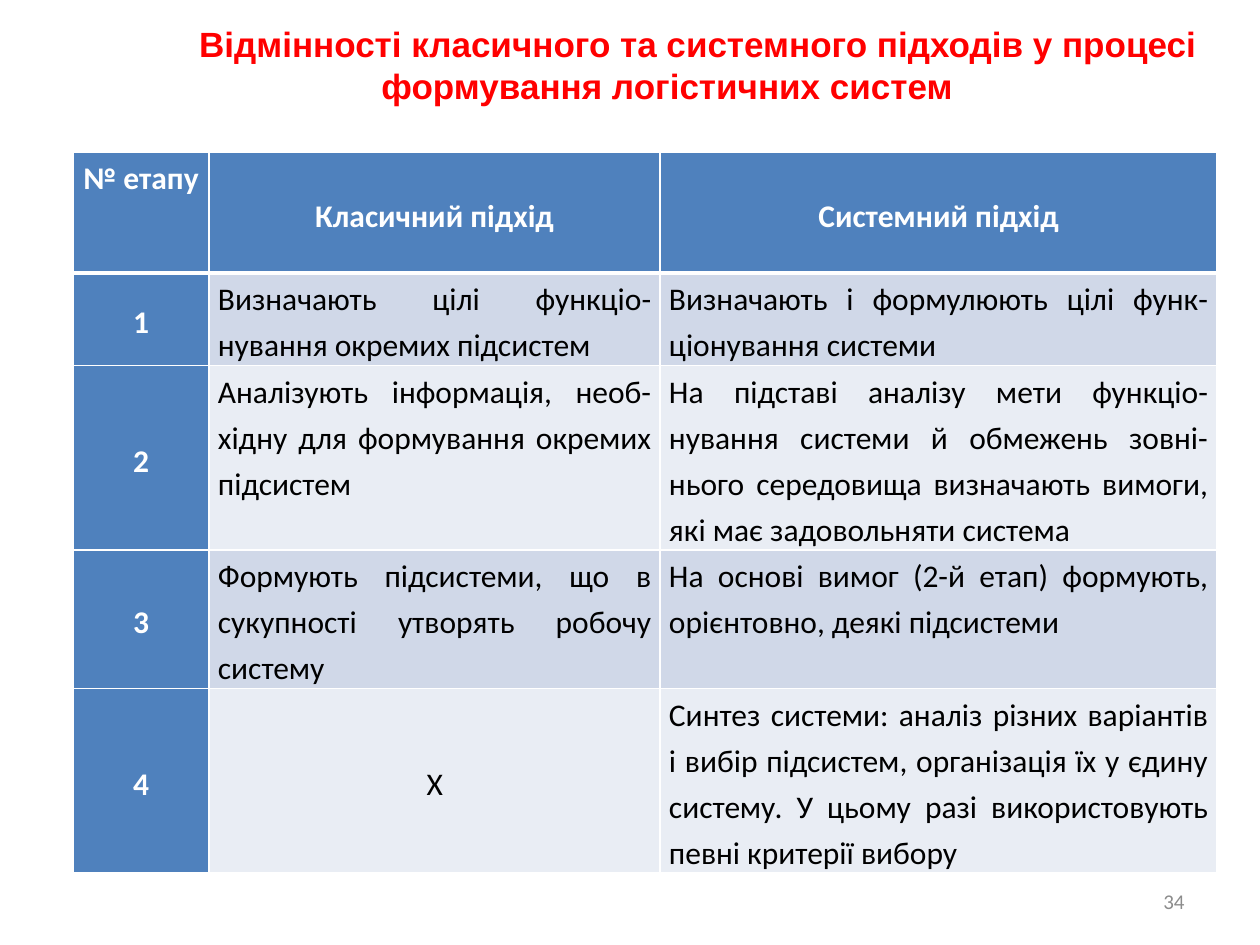
from dataclasses import dataclass

import lxml.etree
import pptx
import pptx.dml.color
import pptx.enum.text
import pptx.oxml.ns
import pptx.util

ALIGN = pptx.enum.text.PP_ALIGN
ANCHOR = pptx.enum.text.MSO_ANCHOR
WIDTH, HEIGHT = 10, 7.5


@dataclass(frozen=True)
class Theme:
    accent: str = "4F81BD"
    bands: tuple[str, str] = ("D0D8E8", "E9EDF4")
    white: str = "FFFFFF"
    black: str = "000000"
    title: str = "FF0000"
    muted: str = "8C8C8C"
    title_font: str = "Arial"
    body_font: str = "Calibri"
    title_size: int = 20
    body_size: int = 18
    number_size: int = 12


@dataclass(frozen=True)
class Box:
    """Place and size as shares of the slide."""
    left: float
    top: float
    width: float
    height: float

    def lengths(self) -> tuple[int, int, int, int]:
        inches = pptx.util.Inches
        return (inches(self.left * WIDTH), inches(self.top * HEIGHT),
                inches(self.width * WIDTH), inches(self.height * HEIGHT))


@dataclass(frozen=True)
class TextStyle:
    font: str
    size: int
    color: str
    bold: bool = False
    align: ALIGN = ALIGN.CENTER
    anchor: ANCHOR = ANCHOR.MIDDLE


@dataclass(frozen=True)
class Stage:
    classical: str
    systemic: str
    height: float


THEME = Theme()
TITLE_BOX = Box(0.092, 0.0175, 0.875, 0.144)
NUMBER_BOX = Box(0.717, 0.927, 0.233, 0.053)
TABLE_BOX = Box(0.058, 0.161, 0.908, 0.717)
COLUMN_WIDTHS = (1.08, 3.58, 4.42)
HEADER_HEIGHT = 0.96
HEADERS = ("№ етапу", "Класичний підхід", "Системний підхід")
NOT_APPLICABLE = "Х"
STAGES = (
    Stage("Визначають цілі функціо-нування окремих підсистем",
          "Визначають і формулюють цілі функ-ціонування системи", 0.68),
    Stage("Аналізують інформація, необ-хідну для формування окремих підсистем",
          "На підставі аналізу мети функціо-нування системи й обмежень зовні-нього "
          "середовища визначають вимоги, які має задовольняти система", 1.36),
    Stage("Формують підсистеми, що в сукупності утворять робочу систему",
          "На основі вимог (2-й етап) формують, орієнтовно, деякі підсистеми", 1.02),
    Stage(NOT_APPLICABLE,
          "Синтез системи: аналіз різних варіантів і вибір підсистем, організація їх "
          "у єдину систему. У цьому разі використовують певні критерії вибору", 1.36),
)


def rgb(color: str) -> pptx.dml.color.RGBColor:
    return pptx.dml.color.RGBColor.from_string(color)


def write_paragraph(frame, text: str, style: TextStyle):
    paragraph = frame.paragraphs[0]
    paragraph.text = text
    paragraph.alignment = style.align
    paragraph.font.name = style.font
    paragraph.font.size = pptx.util.Pt(style.size)
    paragraph.font.bold = style.bold
    paragraph.font.color.rgb = rgb(style.color)
    return paragraph


def add_text(slide, box: Box, text: str, style: TextStyle):
    frame = slide.shapes.add_textbox(*box.lengths()).text_frame
    frame.word_wrap = True
    frame.vertical_anchor = style.anchor
    return write_paragraph(frame, text, style)


def set_borders(cell, top: float, bottom: float) -> None:
    """Draw white cell edges, with the side edges one point wide."""
    qn = pptx.oxml.ns.qn
    properties = cell._tc.get_or_add_tcPr()
    for side, points in (("L", 1), ("R", 1), ("T", top), ("B", bottom)):
        line = lxml.etree.SubElement(properties, qn(f"a:ln{side}"),
                                     w=str(pptx.util.Pt(points)))
        fill = lxml.etree.SubElement(line, qn("a:solidFill"))
        lxml.etree.SubElement(fill, qn("a:srgbClr"), val=THEME.white)


def fill_cell(cell, text: str, row: int, column: int) -> None:
    is_heading = row == 0 or column == 0
    is_centered = is_heading or text == NOT_APPLICABLE
    is_top = (row, column) == (0, 0) or not is_centered
    style = TextStyle(THEME.body_font, THEME.body_size,
                      THEME.white if is_heading else THEME.black, is_heading,
                      ALIGN.CENTER if is_centered else ALIGN.JUSTIFY,
                      ANCHOR.TOP if is_top else ANCHOR.MIDDLE)
    set_borders(cell, top=3 if row == 1 else 1, bottom=3 if row == 0 else 1)
    cell.fill.solid()
    cell.fill.fore_color.rgb = rgb(THEME.accent if is_heading
                                   else THEME.bands[(row - 1) % 2])
    cell.margin_left = cell.margin_right = pptx.util.Inches(0.07)
    cell.margin_top = cell.margin_bottom = 0
    cell.vertical_anchor = style.anchor
    write_paragraph(cell.text_frame, text, style).line_spacing = 1.2


def add_stage_table(slide) -> None:
    rows = [HEADERS] + [(str(number), stage.classical, stage.systemic)
                        for number, stage in enumerate(STAGES, 1)]
    table = slide.shapes.add_table(len(rows), len(HEADERS), *TABLE_BOX.lengths()).table
    for column, width in zip(table.columns, COLUMN_WIDTHS):
        column.width = pptx.util.Inches(width)
    heights = [HEADER_HEIGHT] + [stage.height for stage in STAGES]
    for row, height in zip(table.rows, heights):
        row.height = pptx.util.Inches(height)
    for row, texts in enumerate(rows):
        for column, text in enumerate(texts):
            fill_cell(table.cell(row, column), text, row, column)


def add_title(slide) -> None:
    style = TextStyle(THEME.title_font, THEME.title_size, THEME.title, True,
                      anchor=ANCHOR.TOP)
    paragraph = add_text(slide, TITLE_BOX,
                         "Відмінності класичного та системного підходів у процесі "
                         "формування логістичних систем", style)
    paragraph._p.get_or_add_pPr().set("indent", str(pptx.util.Inches(0.49)))


def main() -> None:
    presentation = pptx.Presentation()
    presentation.slide_width = pptx.util.Inches(WIDTH)
    presentation.slide_height = pptx.util.Inches(HEIGHT)
    slide = presentation.slides.add_slide(presentation.slide_layouts[6])
    add_stage_table(slide)
    add_title(slide)
    add_text(slide, NUMBER_BOX, "34",
             TextStyle(THEME.body_font, THEME.number_size, THEME.muted,
                       align=ALIGN.RIGHT))
    presentation.save("out.pptx")


if __name__ == "__main__":
    main()
